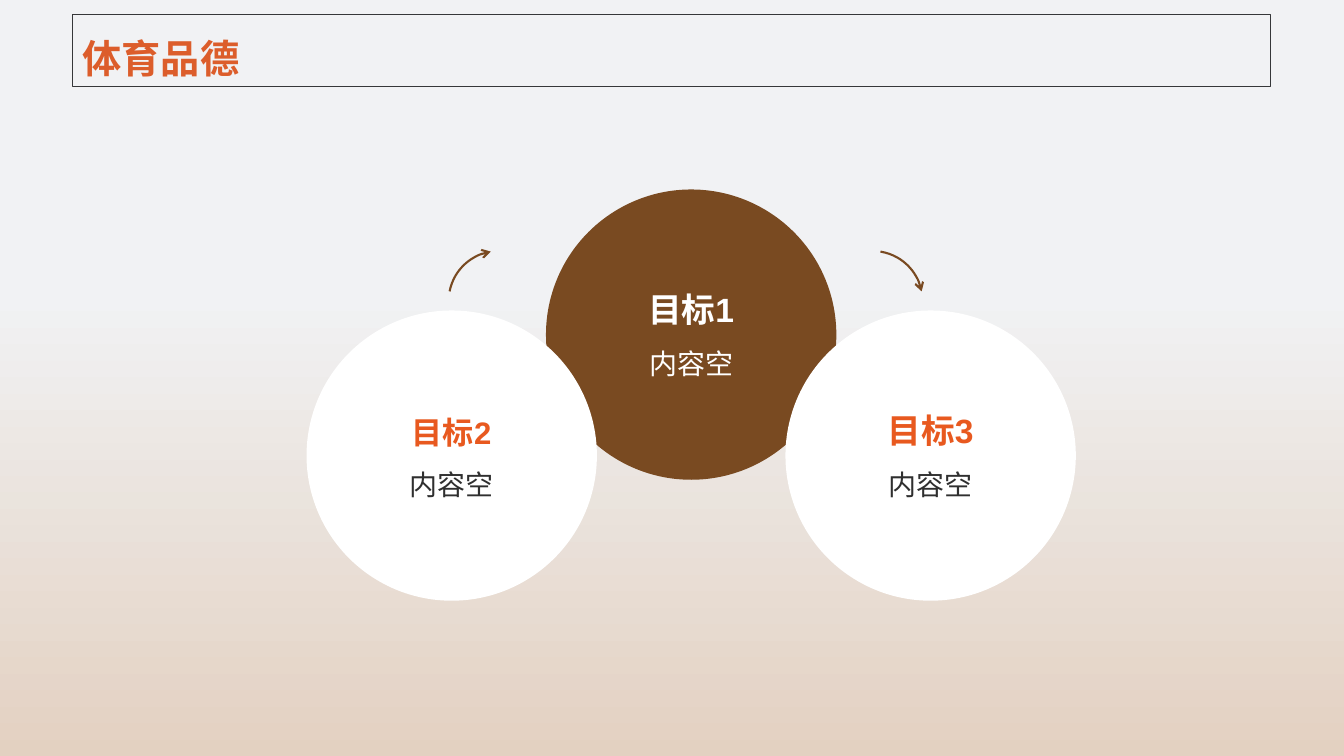
from lxml import etree
from pptx import Presentation
from pptx.dml.color import RGBColor
from pptx.enum.shapes import MSO_SHAPE
from pptx.enum.text import MSO_ANCHOR, MSO_AUTO_SIZE, PP_ALIGN
from pptx.oxml.ns import qn
from pptx.util import Inches, Pt

RECT, OVAL, ARC = MSO_SHAPE.RECTANGLE, MSO_SHAPE.OVAL, MSO_SHAPE.ARC
TOP, BOTTOM = MSO_ANCHOR.TOP, MSO_ANCHOR.BOTTOM
LEFT, CENTER = PP_ALIGN.LEFT, PP_ALIGN.CENTER
FIXED = MSO_AUTO_SIZE.NONE
WIDE, HIGH = 13.33, 7.5
SANS, CJK = "Arial", "Noto Sans CJK SC"
HUES = {
    "sand": "F0DAC7", "white": "FFFFFF", "slate": "778495",
    "brown": "794A21", "orange": "E8591F", "ink": "2F2F2F",
}


def hue(name):
    return RGBColor.from_string(HUES[name])


def lengths(box):
    return [Inches(side) for side in box]


def write(frame, text, size, color, font, bold, align, anchor):
    frame.word_wrap = True
    frame.auto_size = FIXED
    frame.vertical_anchor = anchor
    para = frame.paragraphs[0]
    para.alignment = align
    run = para.add_run()
    run.text = text
    run.font.size = Pt(size)
    run.font.bold = bold
    run.font.name = font
    run.font.color.rgb = hue(color)
    east = etree.SubElement(run.font._element, qn("a:ea"))
    east.set("typeface", CJK)
    return para


def draw(shapes, kind, box, color):
    shape = shapes.add_shape(kind, *lengths(box))
    shape.shadow.inherit = False
    shape.fill.solid()
    shape.fill.fore_color.rgb = hue(color)
    shape.line.fill.background()
    return shape


def backdrop(slide, box):
    fill = slide.background.fill
    fill.gradient()
    fill.gradient_angle = 90
    for stop, (color, place) in zip(fill.gradient_stops, [("sand", 0), ("white", 0.61)]):
        stop.color.rgb = hue(color)
        stop.position = place
    veil = draw(slide.shapes, RECT, box, "slate")
    tint = veil.fill._xPr.find(qn("a:solidFill"))[0]
    etree.SubElement(tint, qn("a:alpha")).set("val", "10000")


def heading(slide, box, text):
    title = slide.shapes.title
    title.left, title.top, title.width, title.height = lengths(box)
    title.line.color.rgb = hue("ink")
    title.line.width = Pt(0.75)
    write(title.text_frame, text, 28, "orange", SANS, True, LEFT, BOTTOM)


def arrow(slide, box, start, end):
    arc = slide.shapes.add_shape(ARC, *lengths(box))
    arc.shadow.inherit = False
    arc.fill.background()
    arc.line.color.rgb = hue("brown")
    arc.line.width = Pt(1.5)
    for index, angle in enumerate((start, end)):
        arc.adjustments[index] = angle * 0.6
    line = arc.line._get_or_add_ln()
    etree.SubElement(line, qn("a:tailEnd")).set("type", "arrow")


def goal(slide, box, name, size, fill, head, body):
    left, top, side, _ = box
    group = slide.shapes.add_group_shape()
    draw(group.shapes, OVAL, box, fill)
    rows = [
        (0.36, 0.14, name, size, head, SANS, True, BOTTOM, 1),
        (0.5, 0.3, "内容空", 20, body, CJK, False, TOP, 1.2),
    ]
    for drop, tall, text, points, color, font, bold, anchor, gap in rows:
        area = left + 0.12 * side, top + drop * side, 0.76 * side, tall * side
        label = group.shapes.add_textbox(*lengths(area))
        para = write(label.text_frame, text, points, color, font, bold, CENTER, anchor)
        para.line_spacing = float(gap)


def goals(slide, box):
    left, top, width, height = box
    side = 2.88
    step = (width - side) / 2
    low = height - side
    for column, start, end in [(4.45, 191, 261), (8.16, 279, 349)]:
        arrow(slide, (column, top + 0.61, 0.99, 0.99), start, end)
    items = [
        (1, 0, "目标1", 24, "brown", "white", "white"),
        (0, low, "目标2", 22.2, "white", "orange", "ink"),
        (2, low, "目标3", 24, "white", "orange", "ink"),
    ]
    for column, drop, *look in items:
        goal(slide, (left + column * step, top + drop, side, side), *look)


def main():
    deck = Presentation()
    deck.slide_width, deck.slide_height = lengths((WIDE, HIGH))
    slide = deck.slides.add_slide(deck.slide_layouts[5])
    heading(slide, (0.72, 0.14, 11.88, 0.72), "体育品德")
    backdrop(slide, (0, 0, WIDE, HIGH))
    goals(slide, (3.04, 1.88, 7.63, 4.08))
    deck.save("out.pptx")


if __name__ == "__main__":
    main()
